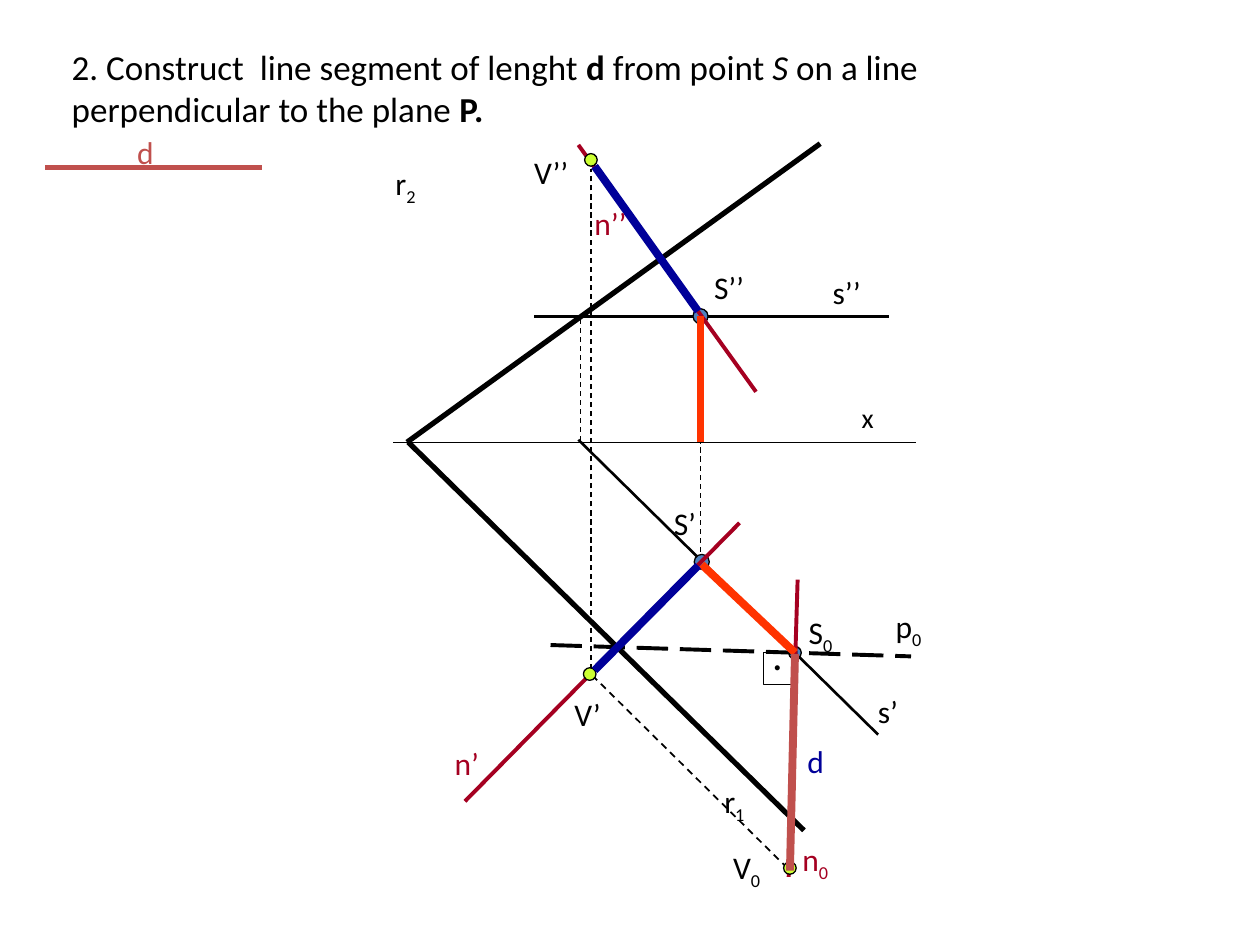
from lxml import etree
from pptx import Presentation
from pptx.dml.color import RGBColor
from pptx.enum.dml import MSO_LINE
from pptx.enum.shapes import MSO_CONNECTOR, MSO_SHAPE
from pptx.enum.text import MSO_ANCHOR, PP_ALIGN
from pptx.oxml.ns import qn
from pptx.util import Pt

STRAIGHT = MSO_CONNECTOR.STRAIGHT
OVAL, RECT = MSO_SHAPE.OVAL, MSO_SHAPE.RECTANGLE
DASH, LONG = MSO_LINE.DASH, MSO_LINE.LONG_DASH
TOP, LEFT = MSO_ANCHOR.TOP, PP_ALIGN.LEFT

BLACK, WINE, ROSE = "000000", "A50021", "C0504D"
RED, NAVY, BLUE, LIME = "FF3300", "000099", "4F81BD", "CCFF33"

# Height of the x axis and the projections of the points, in points
AXIS = 252.7
S1, S2, S0 = (401, 321.1), (400.3, 180.7), (454.3, 373)
V1, V2, V0 = (337, 385.2), (337.7, 91.4), (451.4, 496)

# Lines: start, end, colour, width, dash
BASE = [
    ((224.6, AXIS), (523.4, AXIS), BLACK, 0.75, None),       # x
    ((468.7, 82.1), (232.6, AXIS), BLACK, 3, None),          # r2
    ((233.3, AXIS), (459.4, 474.5), BLACK, 3, None),         # r1
    ((330.5, 251.3), (501.8, 419.8), BLACK, 1.5, None),      # s'
    ((305.3, 180.7), (508.3, 180.7), BLACK, 1.5, None),      # s''
    ((331.9, 252), (331.9, 179.3), BLACK, 0.75, DASH),
    ((400.3, 315.4), (400.3, 180), BLACK, 0.75, DASH),
]
NORMAL = [
    ((265.7, 457.9), (422.6, 298.8), WINE, 2.25, None),      # n'
    ((432, 223.9), (330.5, 82.8), WINE, 2.25, None),         # n''
    ((314.6, 368.6), (520.6, 375.1), BLACK, 2.25, LONG),     # p0
    ((450.7, 501.1), (455.8, 331.2), WINE, 2.25, None),      # n0
    ((338.4, 385.9), (450, 496.1), BLACK, 1, DASH),
    ((337.7, 382.3), (337.7, 96.5), BLACK, 0.75, DASH),
]
THICK = [
    ((25.9, 95.8), (149.8, 95.8), ROSE, 3, None),            # given d
    (S2, (400.3, AXIS), RED, 4.5, None),
    ((401, 322.6), S0, RED, 4.5, None),
    ((339.8, 95), (398.9, 177.8), NAVY, 4.5, None),
    ((398.9, 323.3), (339.8, 383), NAVY, 4.5, None),
    ((454.3, 373.7), (451.4, 497.5), ROSE, 4.5, None),
]

# Labels: text, subscript, left, top, width, colour, size
LABELS = [
    ("x", "", 485.3, 225.4, 36, BLACK, 16),
    ("r", "2", 218.9, 90, 46.8, BLACK, 18),
    ("r", "1", 406.8, 443.5, 38.2, BLACK, 18),
    ("S’", "", 378, 284.4, 45.4, BLACK, 18),
    ("s’", "", 494.6, 391.7, 28.8, BLACK, 18),
    ("s’’", "", 468.7, 152.6, 41, BLACK, 18),
    ("S’’", "", 401, 149.8, 36.7, BLACK, 18),
    ("n’", "", 252.7, 421.9, 36.7, WINE, 18),
    ("n’’", "", 332.6, 113, 38.2, WINE, 18),
    ("d", "", 71.3, 72.7, 40.3, ROSE, 18),
    ("S", "0", 455, 347, 33.1, BLACK, 18),
    ("p", "0", 504.7, 343.4, 33.8, BLACK, 18),
    ("n", "0", 451.4, 476.6, 36.7, WINE, 18),
    (".", "", 434.2, 355.7, 23.8, BLACK, 24),
    ("V", "0", 411.8, 481, 36.7, BLACK, 18),
    ("V’", "", 321.1, 393.8, 37.4, BLACK, 18),
    ("V’’", "", 298.1, 84.2, 40.3, BLACK, 18),
    ("d", "", 454.3, 420.5, 33.8, NAVY, 18),
]

TITLE = [
    ("2. Construct  line segment of lenght ", {}),
    ("d ", {"bold": True}),
    ("from point ", {}),
    ("S ", {"italic": True}),
    ("on a line perpendicular to the plane ", {}),
    ("P.", {"bold": True}),
]


def tint(code):
    return RGBColor.from_string(code)


def add_run(para, text, size, color, **extra):
    run = para.add_run()
    run.text = text
    form = {"name": "Calibri", "size": Pt(size), "bold": False, **extra}
    for key, val in form.items():
        setattr(run.font, key, val)
    run.font.color.rgb = tint(color)
    return run


def add_title(slide):
    box = slide.shapes.title
    place = {"left": 33.8, "top": 22.3, "width": 512, "height": 55.4}
    for key, val in place.items():
        setattr(box, key, Pt(val))
    frame = box.text_frame
    frame.word_wrap, frame.vertical_anchor = True, TOP
    para = frame.paragraphs[0]
    para.alignment = LEFT
    for text, extra in TITLE:
        add_run(para, text, 20, BLACK, **extra)


def add_line(slide, start, end, color, width, dash):
    ends = [Pt(v) for v in (*start, *end)]
    line = slide.shapes.add_connector(STRAIGHT, *ends)
    form = {"width": Pt(width), "dash_style": dash}
    for key, val in form.items():
        setattr(line.line, key, val)
    line.line.color.rgb = tint(color)
    etree.SubElement(line._element.spPr, qn("a:effectLst"))


def add_shape(slide, kind, mid, wide, high, fill=None):
    left, top = mid[0] - wide / 2, mid[1] - high / 2
    shape = slide.shapes.add_shape(kind, Pt(left), Pt(top), Pt(wide), Pt(high))
    shape.shadow.inherit = False
    shape.line.color.rgb = tint(BLACK)
    shape.line.width = Pt(0.75)
    if fill:
        shape.fill.solid()
        shape.fill.fore_color.rgb = tint(fill)
    else:
        shape.fill.background()


def add_label(slide, text, sub, left, top, width, color, size):
    box = slide.shapes.add_textbox(Pt(left), Pt(top), Pt(width), Pt(size * 1.6))
    box.text_frame.word_wrap = True
    para = box.text_frame.paragraphs[0]
    add_run(para, text, size, color)
    if sub:
        low = add_run(para, sub, size, color)
        low.font._element.set("baseline", "-25000")


def main():
    deck = Presentation()
    deck.slide_width, deck.slide_height = Pt(720), Pt(540)
    slide = deck.slides.add_slide(deck.slide_layouts[5])
    add_title(slide)

    # Axis, plane traces and lines through S
    for item in BASE:
        add_line(slide, *item)
    for mid, size in ((S1, 8.6), (S2, 8.6), (S0, 7.2)):
        add_shape(slide, OVAL, mid, size, size, BLUE)

    # Normals, their rotated view and the right angle mark
    for item in NORMAL:
        add_line(slide, *item)
    add_shape(slide, RECT, (445, 382), 17.3, 18)
    for mid in (V1, V2, V0):
        add_shape(slide, OVAL, mid, 7.2, 7.2, LIME)

    # Measured segments
    for item in THICK:
        add_line(slide, *item)

    # Names of points and lines
    for item in LABELS:
        add_label(slide, *item)
    deck.save("out.pptx")


if __name__ == "__main__":
    main()
